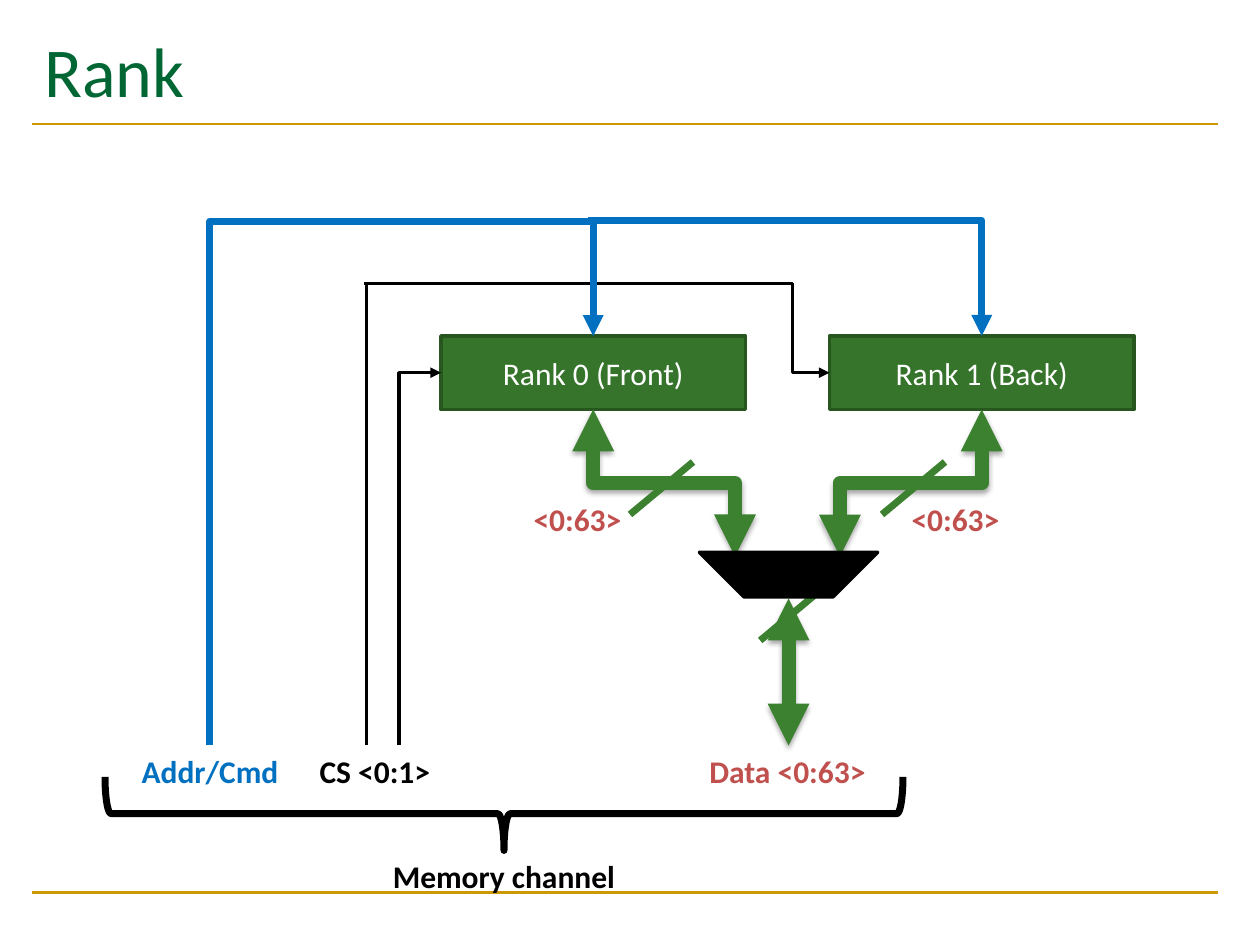
"""Build the Rank slide: two memory ranks sharing one memory channel."""
from lxml.etree import SubElement
from pptx import Presentation
from pptx.dml.color import RGBColor
from pptx.enum.shapes import MSO_CONNECTOR, MSO_SHAPE
from pptx.enum.text import MSO_ANCHOR, PP_ALIGN
from pptx.oxml.ns import qn
from pptx.util import Inches, Pt

COLORS = {"title": "006633", "rule": "CC9900", "rank": "35742A", "edge": "27561F",
          "data": "3B812F", "label": "C0504D", "addr": "0070C0", "black": "000000",
          "white": "FFFFFF"}
COLS, ROWS = 120, 90

prs = Presentation()
prs.slide_width, prs.slide_height = Inches(10), Inches(7.5)
U = prs.slide_width / COLS
s = prs.slides.add_slide(prs.slide_layouts[5])


def grid(*cells):
    return [round(c * U) for c in cells]


def wire(color, width, start, end, heads="", prst="line", adj=None, vertical=False, shadow=False):
    (x1, y1), (x2, y2) = start, end
    if vertical:
        cx, cy = (x1 + x2) / 2, (y1 + y2) / 2
        k = 1 if y2 > y1 else -1
        x1, y1, x2, y2 = (cx + k * (y1 - cy), cy - k * (x1 - cx),
                          cx + k * (y2 - cy), cy - k * (x2 - cx))
    kind = MSO_CONNECTOR.STRAIGHT if prst == "line" else MSO_CONNECTOR.ELBOW
    c = s.shapes.add_connector(kind, *grid(x1, y1, x2, y2))
    c.line.color.rgb = RGBColor.from_string(COLORS[color])
    c.line.width = Pt(width)
    sp_pr = c._element.spPr
    if vertical:
        sp_pr.find(qn("a:xfrm")).set("rot", str((90 if k > 0 else 270) * 60000))
    geom = sp_pr.find(qn("a:prstGeom"))
    geom.set("prst", prst)
    if adj is not None:
        av = geom.find(qn("a:avLst"))
        SubElement(av, qn("a:gd"), name="adj1", fmla=f"val {round(adj * 100000)}")
    for end_name in heads.split():
        SubElement(c.line._get_or_add_ln(), qn(f"a:{end_name}End"), type="triangle")
    effects = SubElement(sp_pr, qn("a:effectLst"))
    if shadow:
        sh = SubElement(effects, qn("a:outerShdw"), blurRad=str(Pt(3.1)), dist=str(Pt(1.8)),
                        dir="5400000", rotWithShape="0")
        rgb = SubElement(sh, qn("a:srgbClr"), val=COLORS["black"])
        SubElement(rgb, qn("a:alpha"), val="35000")


for y in (85, 11.8):
    wire("rule", 1.5, (3, y), (116, y))

title = s.shapes.title
title.left, title.top, title.width, title.height = grid(3, 2, 113, 14)
tf = title.text_frame
tf.text = "Rank"
tf.vertical_anchor = MSO_ANCHOR.TOP
p = tf.paragraphs[0]
p.alignment = PP_ALIGN.LEFT
p.font.size, p.font.name = Pt(40), "Calibri"
p.font.color.rgb = RGBColor.from_string(COLORS["title"])

shapes = []
for text, x in (("Rank 0 (Front)", 42), ("Rank 1 (Back)", 79)):
    sp = s.shapes.add_shape(MSO_SHAPE.RECTANGLE, *grid(x, 32, 29, 7))
    sp.text_frame.text = text
    sp.text_frame.vertical_anchor = MSO_ANCHOR.MIDDLE
    p = sp.text_frame.paragraphs[0]
    p.alignment = PP_ALIGN.CENTER
    p.font.size, p.font.name = Pt(18), "Calibri"
    p.font.color.rgb = RGBColor.from_string(COLORS["white"])
    shapes.append((sp, "rank", "edge", 2))

wire("black", 2, (42, 35.5), (38, 71), "head", "bentConnector2")
wire("black", 2, (79, 35.5), (34.7, 27), "head", "bentConnector3", 0.08)
wire("black", 2, (34.9, 27), (34.9, 71))
wire("addr", 4, (56.5, 32), (20, 71), "head", "bentConnector3", -0.28, vertical=True)
wire("addr", 4, (93.5, 32), (56, 21), "head", "bentConnector2", vertical=True)
wire("data", 8, (75.1, 71), (75.1, 57), "head tail", shadow=True)
for mux_x, rank_x in ((70, 56.5), (80, 93.5)):
    wire("data", 8, (mux_x, 53), (rank_x, 39), "head tail", "bentConnector3", 0.5,
         vertical=True, shadow=True)
for x, y in ((60, 49), (84, 49), (72.4, 61)):
    wire("data", 4, (x, y), (x + 6, y - 5))

mux = s.shapes.add_shape(MSO_SHAPE.DIAGONAL_STRIPE, *grid(69.1, 46.6, 12, 12))
mux.rotation = 225
shapes.append((mux, "black", "black", 2))
brace = s.shapes.add_shape(MSO_SHAPE.RIGHT_BRACE, *grid(44.5, 39.5, 7, 76))
brace.rotation = 90
shapes.append((brace, None, "black", 4))

for sp, fill, line, width in shapes:
    sp.shadow.inherit = False
    if fill:
        sp.fill.solid()
        sp.fill.fore_color.rgb = RGBColor.from_string(COLORS[fill])
    else:
        sp.fill.background()
    sp.line.color.rgb = RGBColor.from_string(COLORS[line])
    sp.line.width = Pt(width)

for text, color, x, y, w in (("Data <0:63>", "label", 65, 71, 20),
                             ("CS <0:1>", "black", 25.7, 71, 20),
                             ("Addr/Cmd", "addr", 10, 71, 20),
                             ("<0:63>", "label", 85, 47, 12),
                             ("<0:63>", "label", 49, 47, 12),
                             ("Memory channel", "black", 35, 81, 26)):
    tf = s.shapes.add_textbox(*grid(x, y, w, 4.8)).text_frame
    tf.word_wrap = True
    tf.text = text
    p = tf.paragraphs[0]
    p.alignment = PP_ALIGN.CENTER
    p.font.size, p.font.name, p.font.bold = Pt(18), "Calibri", True
    p.font.color.rgb = RGBColor.from_string(COLORS[color])

prs.save("out.pptx")
